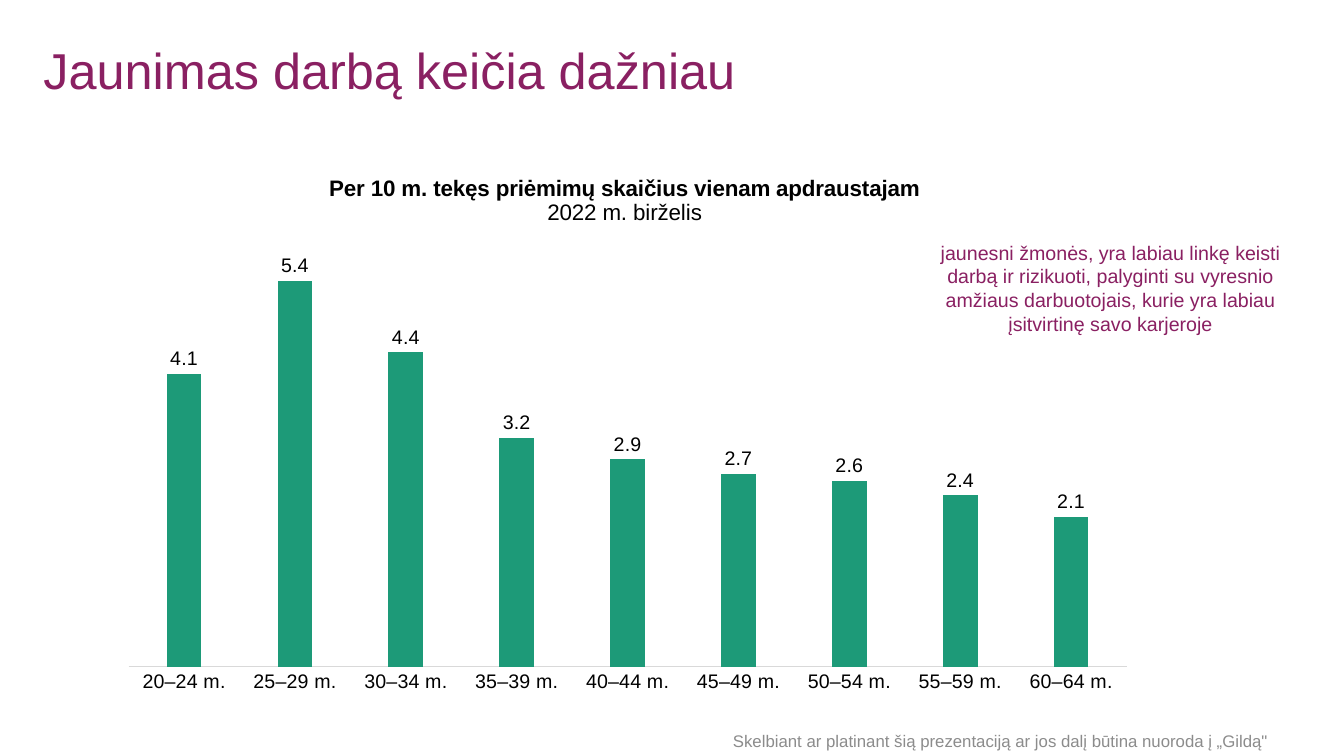
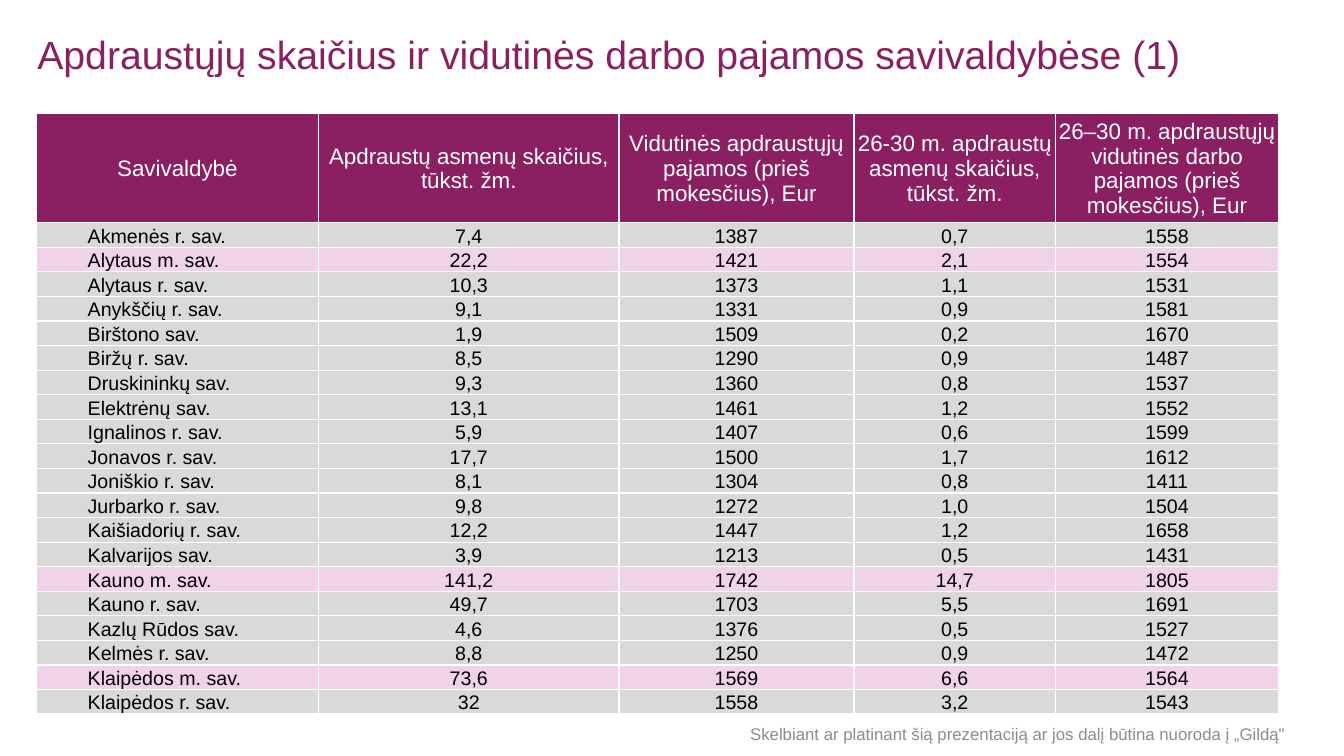
from lxml import etree
from pptx import Presentation
from pptx import util as u
from pptx.chart import data as chart_data
from pptx.dml import color
from pptx.enum import chart as chart_enum
from pptx.enum import text
from pptx.oxml import ns

FONT = "Arial"
PLUM, PINK, GREEN = "8A2062", "F1D3E9", "1D9A78"
GREY, SILVER, WHITE, BLACK = "8C8C8C", "D9D9D9", "FFFFFF", "000000"
LEFT, CENTER, RIGHT = text.PP_ALIGN.LEFT, text.PP_ALIGN.CENTER, text.PP_ALIGN.RIGHT
MIDDLE, TOP, BOTTOM = text.MSO_ANCHOR.MIDDLE, text.MSO_ANCHOR.TOP, text.MSO_ANCHOR.BOTTOM
FOOTER = "Skelbiant ar platinant šią prezentaciją ar jos dalį būtina nuoroda į „Gildą\""

AGES = ["20–24 m.", "25–29 m.", "30–34 m.", "35–39 m.", "40–44 m.",
        "45–49 m.", "50–54 m.", "55–59 m.", "60–64 m."]
HIRINGS = [4.1, 5.4, 4.4, 3.2, 2.9, 2.7, 2.6, 2.4, 2.1]

HEADINGS = [
    "Savivaldybė",
    "Apdraustų asmenų skaičius, tūkst. žm.",
    "Vidutinės apdraustųjų pajamos (prieš mokesčius), Eur",
    "26-30 m. apdraustų asmenų skaičius, tūkst. žm.",
    "26–30 m. apdraustųjų vidutinės darbo pajamos (prieš mokesčius), Eur",
]
MUNICIPALITIES = [
    ("Akmenės r. sav.", "7,4", "1387", "0,7", "1558"),
    ("Alytaus m. sav.", "22,2", "1421", "2,1", "1554"),
    ("Alytaus r. sav.", "10,3", "1373", "1,1", "1531"),
    ("Anykščių r. sav.", "9,1", "1331", "0,9", "1581"),
    ("Birštono sav.", "1,9", "1509", "0,2", "1670"),
    ("Biržų r. sav.", "8,5", "1290", "0,9", "1487"),
    ("Druskininkų sav.", "9,3", "1360", "0,8", "1537"),
    ("Elektrėnų sav.", "13,1", "1461", "1,2", "1552"),
    ("Ignalinos r. sav.", "5,9", "1407", "0,6", "1599"),
    ("Jonavos r. sav.", "17,7", "1500", "1,7", "1612"),
    ("Joniškio r. sav.", "8,1", "1304", "0,8", "1411"),
    ("Jurbarko r. sav.", "9,8", "1272", "1,0", "1504"),
    ("Kaišiadorių r. sav.", "12,2", "1447", "1,2", "1658"),
    ("Kalvarijos sav.", "3,9", "1213", "0,5", "1431"),
    ("Kauno m. sav.", "141,2", "1742", "14,7", "1805"),
    ("Kauno r. sav.", "49,7", "1703", "5,5", "1691"),
    ("Kazlų Rūdos sav.", "4,6", "1376", "0,5", "1527"),
    ("Kelmės r. sav.", "8,8", "1250", "0,9", "1472"),
    ("Klaipėdos m. sav.", "73,6", "1569", "6,6", "1564"),
    ("Klaipėdos r. sav.", "32", "1558", "3,2", "1543"),
]


def rgb(code):
    return color.RGBColor.from_string(code)


def apply(target, **values):
    for name, value in values.items():
        setattr(target, name, value)


def style_font(font, size, code, bold=False):
    apply(font, name=FONT, size=u.Pt(size), bold=bold)
    font.color.rgb = rgb(code)


def paint(target, code):
    target.fill.solid()
    target.fill.fore_color.rgb = rgb(code)


def set_layout(parent, **values):
    layout = parent.find(ns.qn("c:layout"))
    if layout is None:
        layout = etree.Element(ns.qn("c:layout"))
        parent.insert(0, layout)
    manual = etree.SubElement(layout, ns.qn("c:manualLayout"))
    for name, value in values.items():
        etree.SubElement(manual, ns.qn("c:" + name), val=str(value))


def set_borders(cell, code, width):
    properties = cell._tc.get_or_add_tcPr()
    for side in ("lnL", "lnR", "lnT", "lnB"):
        line = etree.SubElement(properties, ns.qn("a:" + side), w=str(u.Pt(width)))
        fill = etree.SubElement(line, ns.qn("a:solidFill"))
        etree.SubElement(fill, ns.qn("a:srgbClr"), val=code)


class Deck:
    def __init__(self):
        self.deck = Presentation()
        apply(self.deck, slide_width=u.Inches(13.33), slide_height=u.Inches(7.5))
        self.page = None

    def add_page(self):
        self.page = self.deck.slides.add_slide(self.deck.slide_layouts[5])

    def fill_text(self, frame, words, size, code, align, spacing=None):
        frame.word_wrap = True
        para = frame.paragraphs[0]
        apply(para, alignment=align, line_spacing=spacing)
        span = para.add_run()
        span.text = words
        style_font(span.font, size, code)

    def title(self, words, place, size):
        box = self.page.shapes.title
        names = ("left", "top", "width", "height")
        apply(box, **dict(zip(names, map(u.Inches, place))))
        apply(box.text_frame, vertical_anchor=MIDDLE, auto_size=text.MSO_AUTO_SIZE.NONE)
        self.fill_text(box.text_frame, words, size, PLUM, LEFT, 0.9)

    def label(self, words, place, size, code, align=CENTER, anchor=TOP):
        box = self.page.shapes.add_textbox(*map(u.Inches, place))
        box.text_frame.vertical_anchor = anchor
        self.fill_text(box.text_frame, words, size, code, align)

    def footer(self, place, align):
        self.label(FOOTER, place, 12, GREY, align, MIDDLE)

    def columns(self, heading, subheading, categories, values, place):
        numbers = chart_data.CategoryChartData(number_format="0.0")
        numbers.categories = categories
        numbers.add_series("Priėmimų skaičius", values)
        kind = chart_enum.XL_CHART_TYPE.COLUMN_CLUSTERED
        frame = self.page.shapes.add_chart(kind, *map(u.Inches, place), numbers)
        chart = frame.chart
        style_font(chart.font, 14, BLACK)
        apply(chart, has_legend=False, has_title=True)

        title_frame = chart.chart_title.text_frame
        paras = title_frame.paragraphs[0], title_frame.add_paragraph()
        for para, words, bold in zip(paras, (heading, subheading), (True, False)):
            para.alignment = CENTER
            span = para.add_run()
            span.text = words
            style_font(span.font, 16, BLACK, bold)
        chart_title = chart.element.xpath("c:chart/c:title")[0]
        set_layout(chart_title, xMode="edge", yMode="edge", x=0.21, y=0.04)

        plot = chart.plots[0]
        apply(plot, gap_width=219, overlap=-27, vary_by_categories=False, has_data_labels=True)
        apply(plot.data_labels, show_value=True, number_format="#,##0.0",
              number_format_is_linked=False,
              position=chart_enum.XL_LABEL_POSITION.OUTSIDE_END)
        style_font(plot.data_labels.font, 14, BLACK)
        paint(plot.series[0].format, GREEN)

        no_tick = chart_enum.XL_TICK_MARK.NONE
        apply(chart.category_axis, major_tick_mark=no_tick, minor_tick_mark=no_tick)
        style_font(chart.category_axis.tick_labels.font, 14, BLACK)
        line = chart.category_axis.format.line
        line.width = u.Pt(0.75)
        line.color.rgb = rgb(SILVER)
        apply(chart.value_axis, visible=False, has_major_gridlines=False,
              minimum_scale=0, maximum_scale=6)
        plot_area = chart.element.xpath("c:chart/c:plotArea")[0]
        set_layout(plot_area, layoutTarget="inner", xMode="edge", yMode="edge",
                   x=0.02, y=0.16, w=0.96, h=0.77)

    def table(self, headings, records, place, widths, heading_height):
        rows = [headings, *records]
        frame = self.page.shapes.add_table(len(rows), len(headings), *map(u.Inches, place))
        table = frame.table
        table.horz_banding = False
        for column, width in zip(table.columns, widths):
            column.width = u.Inches(width)
        record_height = (place[3] - heading_height) / len(records)
        for index, values in enumerate(rows):
            is_heading = index == 0
            table.rows[index].height = u.Inches(heading_height if is_heading else record_height)
            if is_heading:
                fill, size, code, anchor = PLUM, 16, WHITE, MIDDLE
            else:
                fill = PINK if values[0].endswith("m. sav.") else SILVER
                size, code, anchor = 14, BLACK, BOTTOM
            for position, words in enumerate(values):
                is_name = position == 0 and not is_heading
                cell = table.cell(index, position)
                apply(cell, vertical_anchor=anchor,
                      margin_left=u.Inches(0.51 if is_name else 0.01),
                      margin_right=u.Inches(0.01), margin_top=u.Inches(0.01), margin_bottom=0)
                set_borders(cell, WHITE, 1)
                paint(cell, fill)
                align = LEFT if is_name else CENTER
                self.fill_text(cell.text_frame, words, size, code, align)


def main():
    show = Deck()

    show.add_page()
    show.title("Jaunimas darbą keičia dažniau", (0.33, 0.28, 12.87, 0.89), 36)
    show.footer((7.05, 7.15, 5.75, 0.4), CENTER)
    show.label("jaunesni žmonės, yra labiau linkę keisti darbą ir rizikuoti, palyginti su "
               "vyresnio amžiaus darbuotojais, kurie yra labiau įsitvirtinę savo karjeroje",
               (9.22, 2.34, 3.59, 1.04), 14, PLUM)
    show.columns("Per 10 m. tekęs priėmimų skaičius vienam apdraustajam", "2022 m. birželis",
                 AGES, HIRINGS, (1.07, 1.48, 10.31, 5.52))

    show.add_page()
    show.title("Apdraustųjų skaičius ir vidutinės darbo pajamos savivaldybėse (1)",
               (0.27, 0.27, 12.78, 0.58), 28)
    show.footer((7.17, 7.08, 5.68, 0.4), RIGHT)
    show.table(HEADINGS, MUNICIPALITIES, (0.36, 1.13, 12.32, 5.95),
               (2.8, 2.98, 2.33, 2, 2.21), 1.08)

    show.deck.save("out.pptx")


if __name__ == "__main__":
    main()
